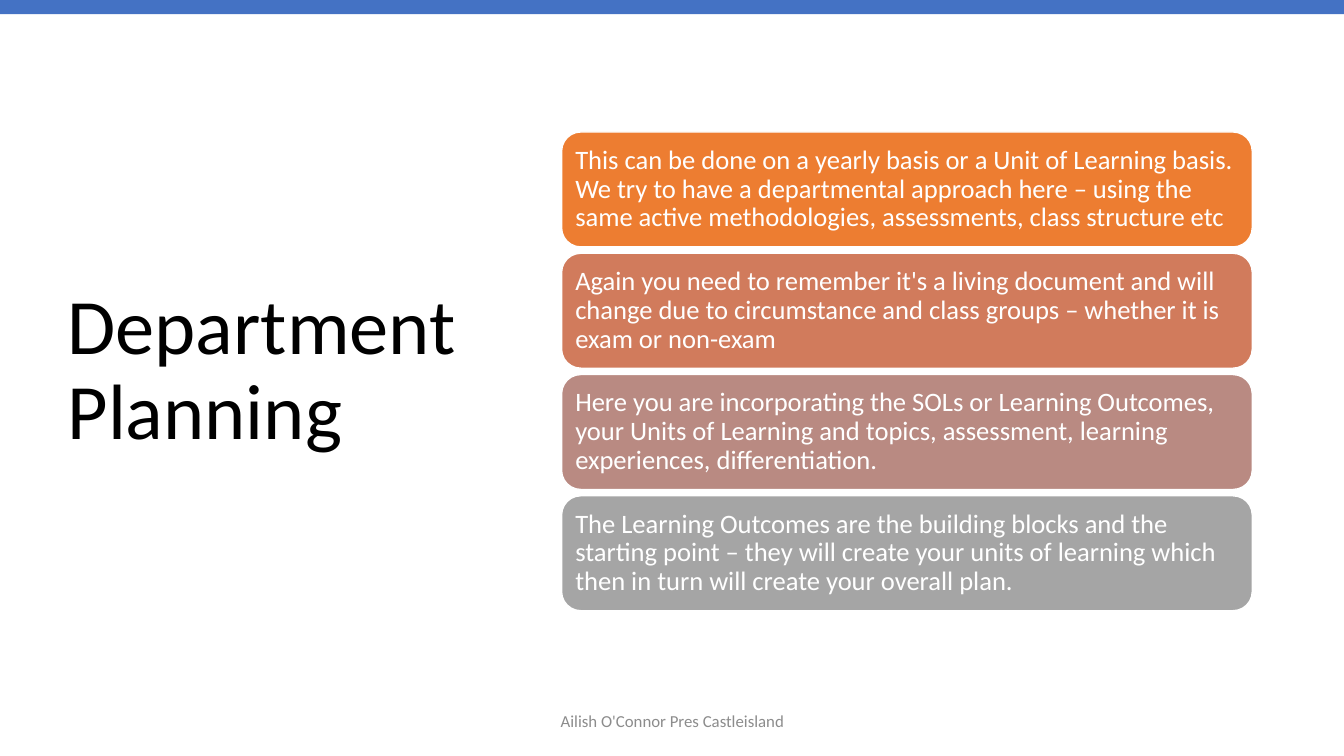
"""Build the Department Planning slide with its four stacked points."""
from dataclasses import dataclass

from lxml.etree import SubElement
from pptx import Presentation
from pptx.dml.color import RGBColor
from pptx.enum.shapes import MSO_SHAPE as Shape
from pptx.enum.text import MSO_ANCHOR as Anchor, PP_ALIGN as Align
from pptx.oxml.ns import qn
from pptx.slide import Slide
from pptx.text.text import TextFrame
from pptx.util import Inches, Pt

FONT = "Calibri"
WHITE = "FFFFFF"
CARD_LEFT, CARD_TOP, CARD_WIDTH, CARD_HEIGHT = 5.57, 1.31, 6.85, 1.14
CARD_STEP = 1.203
CARD_INSET = 0.08


@dataclass(frozen=True)
class Card:
    """A point and the fill of its rounded box."""
    text: str
    fill: str


CARDS = [
    Card("This can be done on a yearly basis or a Unit of Learning basis. "
         "We try to have a departmental approach here – using the same active "
         "methodologies, assessments, class structure etc", "ED7D31"),
    Card("Again you need to remember it's a living document and will change "
         "due to circumstance and class groups – whether it is exam or non-exam",
         "D17B5C"),
    Card("Here you are incorporating the SOLs or Learning Outcomes, your Units "
         "of Learning and topics, assessment, learning experiences, "
         "differentiation. ", "B98A82"),
    Card("The Learning Outcomes are the building blocks and the starting point "
         "– they will create your units of learning which then in turn will "
         "create your overall plan.", "A5A5A5"),
]


def color(value: str) -> RGBColor:
    """Turn a hex string into a colour."""
    return RGBColor.from_string(value)


def write(frame: TextFrame, text: str, size: float, ink: str,
          align: Align = Align.LEFT, spacing: float = 1.0) -> None:
    """Fill a text frame with one formatted, vertically centred paragraph."""
    frame.text = text
    frame.word_wrap = True
    frame.vertical_anchor = Anchor.MIDDLE
    paragraph = frame.paragraphs[0]
    paragraph.alignment = align
    paragraph.line_spacing = spacing
    font = paragraph.runs[0].font
    font.name, font.size, font.color.rgb = FONT, Pt(size), color(ink)


def add_title(slide: Slide) -> None:
    """Place and format the title placeholder."""
    title = slide.shapes.title
    title.left, title.top = Inches(0.57), Inches(0.68)
    title.width, title.height = Inches(4.16), Inches(6.02)
    write(title.text_frame, "Department Planning", 56, "000000", spacing=0.9)
    properties = title.text_frame.paragraphs[0].runs[0].font
    properties.bold = False


def add_top_bar(slide: Slide) -> None:
    """Draw the blue bar along the top edge."""
    bar = slide.shapes.add_shape(Shape.RECTANGLE, 0, 0, Inches(13.33), Inches(0.14))
    bar.shadow.inherit = False
    bar.fill.solid()
    bar.fill.fore_color.rgb = color("4472C4")
    bar.line.fill.background()


def add_footer(slide: Slide) -> None:
    """Add the centred footer line."""
    footer = slide.shapes.add_textbox(Inches(4.42), Inches(6.95), Inches(4.5), Inches(0.4))
    write(footer.text_frame, "Ailish O'Connor Pres Castleisland", 12, "8C8C8C", Align.CENTER)


def add_card(slide: Slide, card: Card, top: float) -> None:
    """Draw one rounded box with its text."""
    box = slide.shapes.add_shape(Shape.ROUNDED_RECTANGLE, Inches(CARD_LEFT), Inches(top),
                                 Inches(CARD_WIDTH), Inches(CARD_HEIGHT))
    box.shadow.inherit = False
    box.fill.solid()
    box.fill.fore_color.rgb = color(card.fill)
    box.line.color.rgb = color(WHITE)
    box.line.width = Pt(1)
    frame = box.text_frame
    frame.margin_left = frame.margin_right = Inches(CARD_INSET)
    frame.margin_top = frame.margin_bottom = Inches(CARD_INSET)
    write(frame, card.text, 19, WHITE, spacing=0.9)


def main() -> None:
    """Assemble and save the slide."""
    presentation = Presentation()
    presentation.slide_width, presentation.slide_height = Inches(13.33), Inches(7.5)
    slide = presentation.slides.add_slide(presentation.slide_layouts[5])
    add_title(slide)
    add_top_bar(slide)
    add_footer(slide)
    for index, card in enumerate(CARDS):
        add_card(slide, card, CARD_TOP + index * CARD_STEP)
    presentation.save("out.pptx")


if __name__ == "__main__":
    main()
